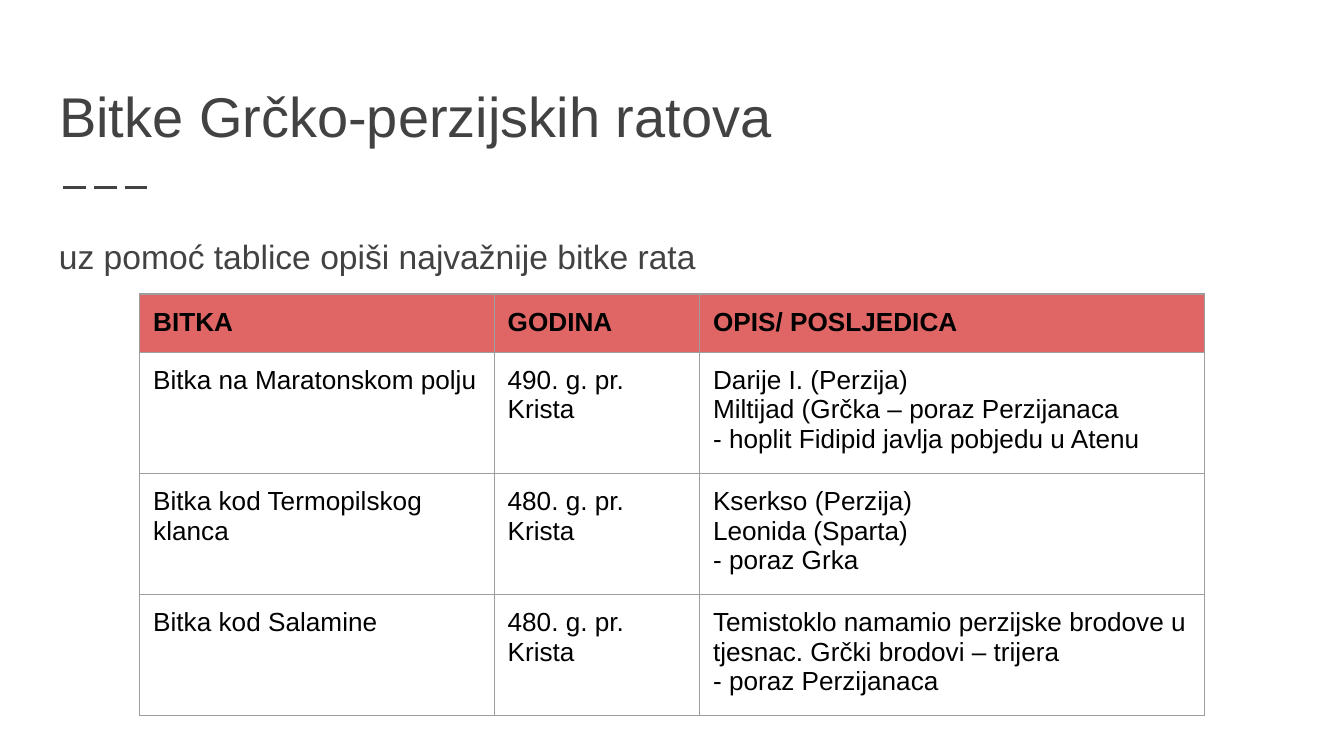
import lxml.etree
import pptx
import pptx.dml.color
import pptx.enum.dml
import pptx.enum.shapes
import pptx.enum.text
import pptx.oxml.ns
import pptx.util

COLORS = {"text": "424242", "header": "E06666", "border": "9E9E9E", "cell": "000000"}
FONT = "Arial"
WIDTH = pptx.util.Inches(10)
HEIGHT = WIDTH * 9 // 16
INSET = pptx.util.Inches(0.1)
COLUMN_SHARES = (0.333, 0.193, 0.474)
BATTLES = [
    ("BITKA", "GODINA", "OPIS/ POSLJEDICA"),
    ("Bitka na Maratonskom polju", "490. g. pr. Krista",
     "Darije I. (Perzija)\nMiltijad (Grčka – poraz Perzijanaca\n"
     "- hoplit Fidipid javlja pobjedu u Atenu"),
    ("Bitka kod Termopilskog klanca", "480. g. pr. Krista",
     "Kserkso (Perzija)\nLeonida (Sparta)\n- poraz Grka"),
    ("Bitka kod Salamine", "480. g. pr. Krista",
     "Temistoklo namamio perzijske brodove u tjesnac. Grčki brodovi – trijera\n"
     "- poraz Perzijanaca"),
]


def rgb(name):
    """Return the named palette colour."""
    return pptx.dml.color.RGBColor.from_string(COLORS[name])


def share_box(left, top, width, height):
    """Turn shares of the slide into a box of lengths."""
    return (int(left * WIDTH), int(top * HEIGHT), int(width * WIDTH), int(height * HEIGHT))


def write(tf, text, size, color, bold=False):
    """Fill a text frame with left-aligned paragraphs in one style."""
    tf.text = text
    for p in tf.paragraphs:
        p.alignment = pptx.enum.text.PP_ALIGN.LEFT
        p.font.name, p.font.size, p.font.bold = FONT, pptx.util.Pt(size), bold
        p.font.color.rgb = rgb(color)


def set_insets(target):
    """Give a text frame or a cell equal margins."""
    target.margin_left = target.margin_right = INSET
    target.margin_top = target.margin_bottom = INSET


def add_heading(s, box):
    """Place the title with the dashed rule below it."""
    left, top, width, height = box
    sp = s.shapes.title
    sp.left, sp.top, sp.width, sp.height = box
    tf = sp.text_frame
    set_insets(tf)
    tf.word_wrap = True
    tf.auto_size = pptx.enum.text.MSO_AUTO_SIZE.NONE
    tf.vertical_anchor = pptx.enum.text.MSO_ANCHOR.BOTTOM
    write(tf, "Bitke Grčko-perzijskih ratova", 30, "text")
    start, y = left + int(0.014 * width), top + int(1.23 * height)
    rule = s.shapes.add_connector(
        pptx.enum.shapes.MSO_CONNECTOR.STRAIGHT, start, y, start + int(0.072 * width), y)
    rule.line.color.rgb = rgb("text")
    rule.line.width = pptx.util.Pt(1.5)
    rule.line.dash_style = pptx.enum.dml.MSO_LINE.LONG_DASH
    lxml.etree.SubElement(rule._element.spPr, pptx.oxml.ns.qn("a:effectLst"))


def add_task(s, box):
    """Place the task sentence."""
    tf = s.shapes.add_textbox(*box).text_frame
    set_insets(tf)
    tf.word_wrap = True
    write(tf, "uz pomoć tablice opiši najvažnije bitke rata", 18, "text")
    tf.paragraphs[0].line_spacing = 1.15
    tf.paragraphs[0].space_after = pptx.util.Pt(16)


def add_borders(cell):
    """Draw thin borders on all four sides of a cell."""
    qn = pptx.oxml.ns.qn
    tc_pr = cell._tc.get_or_add_tcPr()
    for side in "LRTB":
        ln = lxml.etree.SubElement(tc_pr, qn(f"a:ln{side}"), w=str(int(pptx.util.Pt(0.75))))
        fill = lxml.etree.SubElement(ln, qn("a:solidFill"))
        lxml.etree.SubElement(fill, qn("a:srgbClr"), val=COLORS["border"])


def add_battles(s, box):
    """Place the table of battles, whose equal rows grow with their text."""
    table = s.shapes.add_table(len(BATTLES), len(COLUMN_SHARES), *box).table
    table.first_row = table.horz_banding = False
    for column, share in zip(table.columns, COLUMN_SHARES):
        column.width = int(share * box[2])
    for row, texts in zip(table.rows, BATTLES):
        header = texts is BATTLES[0]
        for cell, text in zip(row.cells, texts):
            set_insets(cell)
            write(cell.text_frame, text, 14, "cell", header)
            add_borders(cell)
            if header:
                cell.fill.solid()
                cell.fill.fore_color.rgb = rgb("header")
            else:
                cell.fill.background()


def main():
    """Build and save the slide."""
    prs = pptx.Presentation()
    prs.slide_width, prs.slide_height = WIDTH, HEIGHT
    s = prs.slides.add_slide(prs.slide_layouts[5])
    add_heading(s, share_box(0.034, 0.073, 0.932, 0.142))
    add_task(s, share_box(0.034, 0.286, 0.932, 0.603))
    add_battles(s, share_box(0.104, 0.389, 0.792, 0.3))
    prs.save("out.pptx")


if __name__ == "__main__":
    main()
